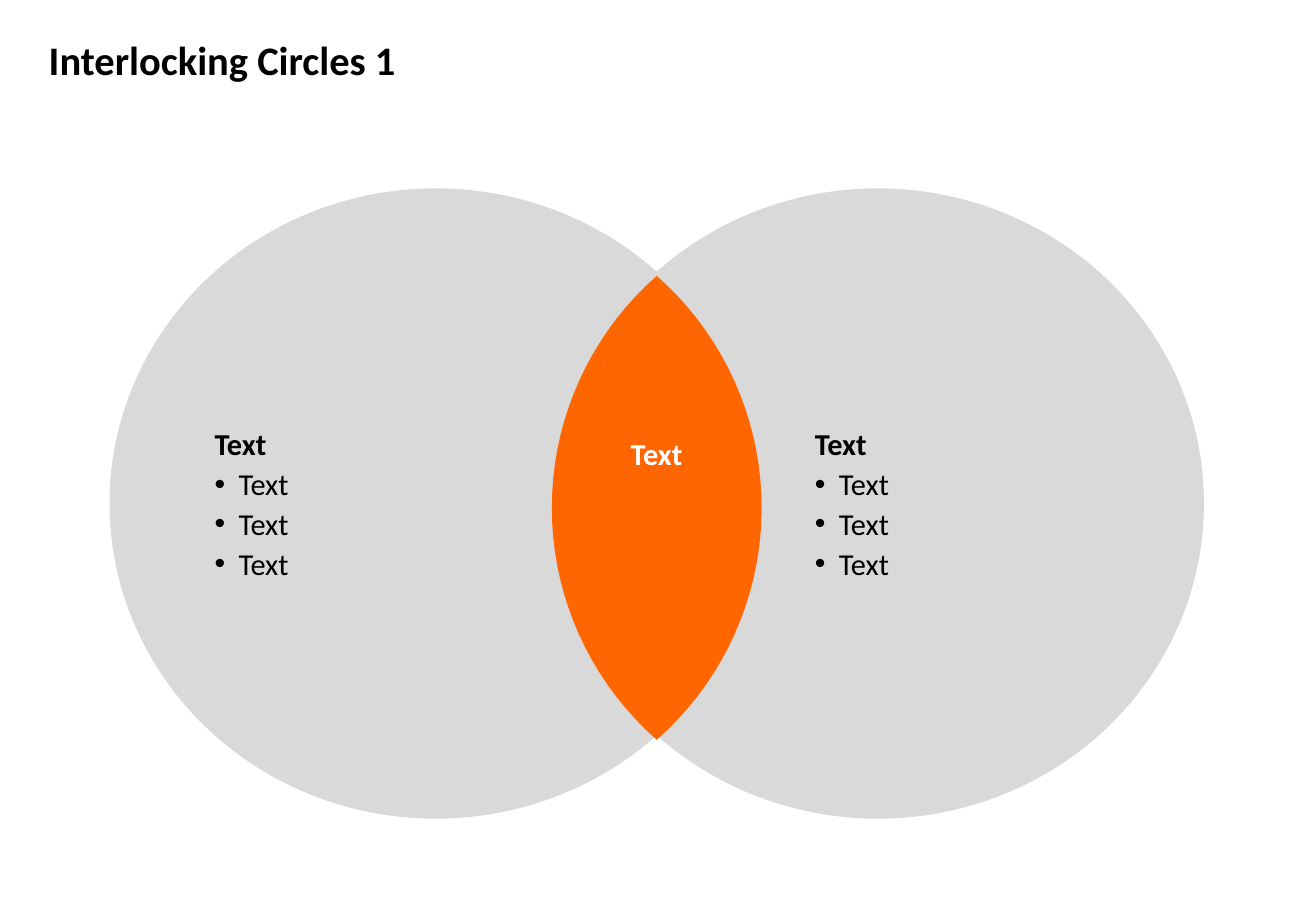
from math import asin, cos, sin

from lxml.etree import SubElement
from pptx import Presentation
from pptx.dml.color import RGBColor
from pptx.enum.shapes import MSO_SHAPE
from pptx.enum.text import MSO_ANCHOR, MSO_AUTO_SIZE, PP_ALIGN
from pptx.oxml.ns import qn
from pptx.util import Cm, Pt


def color(value):
    return RGBColor.from_string(value)


class VennSlide:
    font = "Calibri"
    black = "000000"
    white = "FFFFFF"
    gray = "D9D9D9"
    orange = "FF6600"

    def __init__(self, presentation):
        self.slide = presentation.slides.add_slide(presentation.slide_layouts[6])

    def paint(self, shape, fill):
        shape.shadow.inherit = False
        shape.fill.solid()
        shape.fill.fore_color.rgb = color(fill)
        shape.line.fill.background()

    def run(self, paragraph, text, size, bold, ink):
        run = paragraph.add_run()
        run.text = text
        run.font.name = self.font
        run.font.size = Pt(size)
        run.font.bold = bold
        run.font.color.rgb = color(ink)

    def hang(self, paragraph, bulleted):
        properties = paragraph._p.get_or_add_pPr()
        properties.set("marL", str(Cm(0.5)))
        properties.set("indent", str(-Cm(0.5)))
        if bulleted:
            SubElement(properties, qn("a:buFont"), typeface="Arial")
            SubElement(properties, qn("a:buChar"), char="•")

    def circle(self, left, text_inset, heading, items):
        shape = self.slide.shapes.add_shape(
            MSO_SHAPE.OVAL, Cm(left), Cm(3.94), Cm(13.64), Cm(13.18))
        self.paint(shape, self.gray)
        frame = shape.text_frame
        frame.word_wrap = True
        frame.vertical_anchor = MSO_ANCHOR.MIDDLE
        frame.margin_left = Cm(text_inset)
        frame.margin_right = frame.margin_top = frame.margin_bottom = Cm(0.2)
        for index, text in enumerate([heading, *items]):
            paragraph = frame.add_paragraph() if index else frame.paragraphs[0]
            paragraph.alignment = PP_ALIGN.LEFT
            paragraph.space_before = paragraph.space_after = Pt(1)
            self.hang(paragraph, index > 0)
            self.run(paragraph, text, 18, index == 0, self.black)

    def lens(self, center_x, center_y, radius, half_height, steps=36):
        half_angle = asin(half_height / radius)
        offset = radius * cos(half_angle)
        points = []
        for side in (-1, 1):
            for step in range(steps):
                angle = side * half_angle * (2 * step / steps - 1)
                x = center_x + side * (radius * cos(angle) - offset)
                y = center_y + radius * sin(angle)
                points.append((Cm(x), Cm(y)))
        builder = self.slide.shapes.build_freeform(*points[0])
        builder.add_line_segments(points[1:], close=True)
        self.paint(builder.convert_to_shape(), self.orange)

    def label(self, left, top, width, height, text, size, ink,
              alignment=PP_ALIGN.LEFT, margin=0.25):
        box = self.slide.shapes.add_textbox(Cm(left), Cm(top), Cm(width), Cm(height))
        frame = box.text_frame
        frame.word_wrap = True
        frame.auto_size = MSO_AUTO_SIZE.NONE
        frame.vertical_anchor = MSO_ANCHOR.MIDDLE
        frame.margin_left = frame.margin_right = Cm(margin)
        frame.margin_top = frame.margin_bottom = 0
        paragraph = frame.paragraphs[0]
        paragraph.alignment = alignment
        self.run(paragraph, text, size, True, ink)


def main():
    presentation = Presentation()
    presentation.slide_width = Cm(27.51)
    presentation.slide_height = Cm(19.05)
    venn = VennSlide(presentation)
    for left, text_inset in ((2.29, 0.2), (11.53, 3.51)):
        venn.circle(left, text_inset, "Text", ["Text"] * 3)
    venn.lens(13.73, 10.62, 6.46, 4.85)
    venn.label(12.3, 9.1, 2.85, 0.76, "Text", 18, venn.white, PP_ALIGN.CENTER, 0)
    venn.label(0.77, 0.82, 26.47, 0.84, "Interlocking Circles 1", 24, venn.black)
    presentation.save("out.pptx")


if __name__ == "__main__":
    main()
